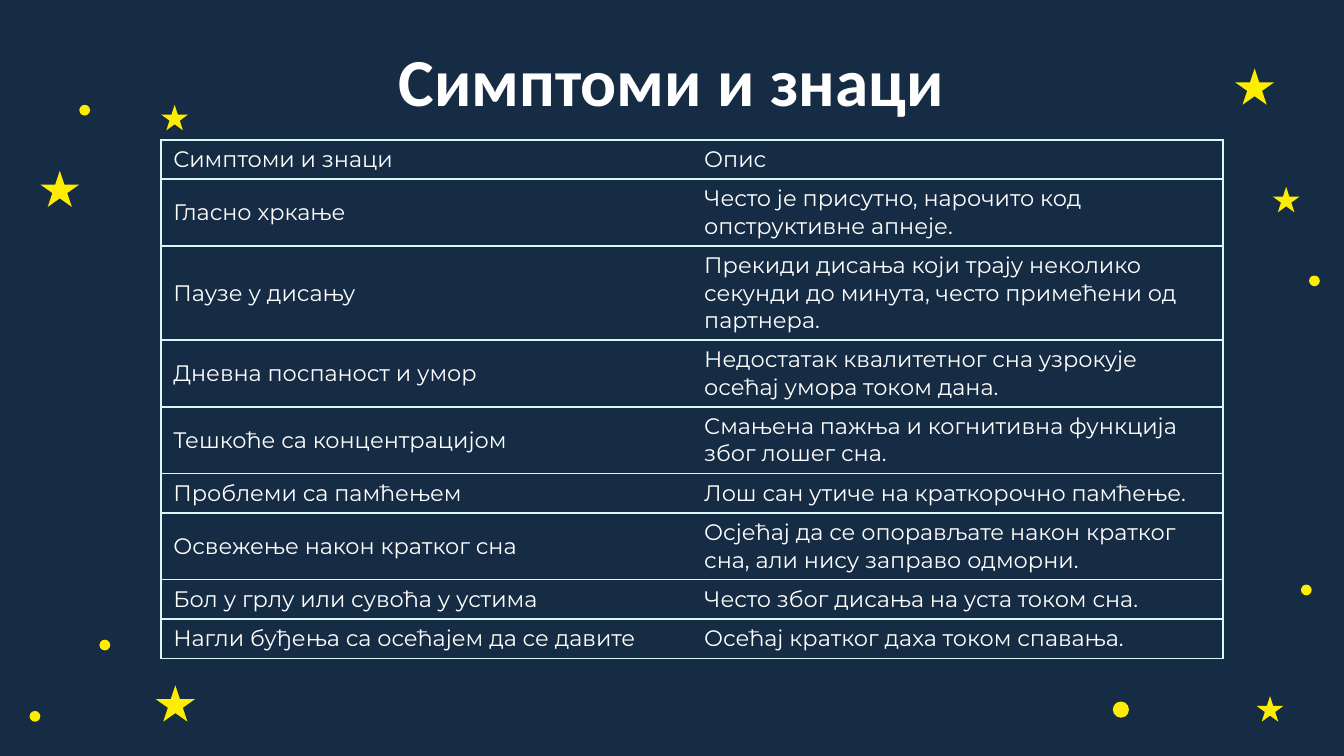
"""Build the slide listing sleep apnea symptoms on a starry night background."""
from lxml.etree import SubElement
from pptx import Presentation
from pptx.dml.color import RGBColor as Color
from pptx.enum.shapes import MSO_SHAPE as Shape
from pptx.enum.text import MSO_ANCHOR as Anchor, PP_ALIGN as Align
from pptx.oxml.ns import qn
from pptx.util import Inches, Pt

THEME = {
    "night": "162C44", "star": "FEED01", "text": "FFFFFF", "border": "D9F8F9",
    "title_font": "Calibri", "title_size": 36,
    "body_font": "Montserrat", "body_size": 12, "border_width": 1,
}
TITLE = "Симптоми и знаци"
SYMPTOMS = [
    ("Симптоми и знаци", "Опис", 1),
    ("Гласно хркање", "Често је присутно, нарочито код опструктивне апнеје.", 2),
    ("Паузе у дисању", "Прекиди дисања који трају неколико секунди до минута, "
     "често примећени од партнера.", 3),
    ("Дневна поспаност и умор",
     "Недостатак квалитетног сна узрокује осећај умора током дана.", 2),
    ("Тешкоће са концентрацијом", "Смањена пажња и когнитивна функција због лошег сна.", 2),
    ("Проблеми са памћењем", "Лош сан утиче на краткорочно памћење.", 1),
    ("Освежење након кратког сна",
     "Осјећај да се опорављате након кратког сна, али нису заправо одморни.", 2),
    ("Бол у грлу или сувоћа у устима", "Често због дисања на уста током сна.", 1),
    ("Нагли буђења са осећајем да се давите", "Осећај кратког даха током спавања.", 1),
]
SKY = [
    (Shape.STAR_5_POINT, 0.29, 0.27, [(9.19, 0.51), (0.3, 1.27), (1.16, 5.1)]),
    (Shape.STAR_5_POINT, 0.2, 0.19, [(9.47, 1.39), (9.35, 5.18), (1.2, 0.78)]),
    (Shape.OVAL, 0.08, 0.08, [(9.74, 2.05), (0.59, 0.78), (0.74, 4.76),
                              (9.68, 4.35), (0.22, 5.29)]),
    (Shape.OVAL, 0.12, 0.12, [(8.28, 5.22)]),
]
PAGE_WIDTH = 10
TABLE_LEFT, TABLE_TOP, COLUMN_WIDTH = 1.2, 1.04, 3.95
LINE_SPACING, ROW_PADDING = 1.22, 0.09


def color(name):
    return Color.from_string(THEME[name])


def style_text(para, kind, bold=False):
    for span in para.runs:
        span.font.name = THEME[f"{kind}_font"]
        span.font.size = Pt(THEME[f"{kind}_size"])
        span.font.color.rgb = color("text")
        span.font.bold = bold


def add_sky(page):
    for preset, width, height, places in SKY:
        for left, top in places:
            light = page.shapes.add_shape(
                preset, Inches(left), Inches(top), Inches(width), Inches(height))
            light.shadow.inherit = False
            light.fill.solid()
            light.fill.fore_color.rgb = color("star")
            light.line.fill.background()


def add_title(page):
    box = page.shapes.add_textbox(Inches(0.78), Inches(0.19), Inches(8.43), Inches(0.73))
    frame = box.text_frame
    frame.text = TITLE
    frame.word_wrap = True
    frame.vertical_anchor = Anchor.TOP
    frame.margin_left = frame.margin_right = Inches(0.1)
    frame.margin_top = frame.margin_bottom = Inches(0.1)
    para = frame.paragraphs[0]
    para.alignment = Align.CENTER
    style_text(para, "title", bold=True)


def set_borders(cell, open_side):
    properties = cell._tc.get_or_add_tcPr()
    for side in "LRTB":
        line = SubElement(properties, qn(f"a:ln{side}"), w=str(Pt(THEME["border_width"])))
        if side == open_side:
            SubElement(line, qn("a:noFill"))
        else:
            fill = SubElement(line, qn("a:solidFill"))
            SubElement(fill, qn("a:srgbClr"), val=THEME["border"])


def add_symptom_table(page):
    line_height = THEME["body_size"] * LINE_SPACING / 72
    heights = [lines * line_height + ROW_PADDING for *_, lines in SYMPTOMS]
    table = page.shapes.add_table(
        len(SYMPTOMS), 2, Inches(TABLE_LEFT), Inches(TABLE_TOP),
        Inches(2 * COLUMN_WIDTH), Inches(sum(heights))).table
    table.first_row = table.horz_banding = False
    for column in table.columns:
        column.width = Inches(COLUMN_WIDTH)
    for row, height, (symptom, description, _) in zip(table.rows, heights, SYMPTOMS):
        row.height = Inches(height)
        for cell, text, open_side in zip(row.cells, (symptom, description), "RL"):
            set_borders(cell, open_side)
            cell.fill.solid()
            cell.fill.fore_color.rgb = color("night")
            cell.vertical_anchor = Anchor.MIDDLE
            cell.margin_left = cell.margin_right = Inches(0.09)
            cell.margin_top = cell.margin_bottom = Inches(0.04)
            cell.text_frame.text = text
            style_text(cell.text_frame.paragraphs[0], "body")


def main():
    deck = Presentation()
    deck.slide_width, deck.slide_height = Inches(PAGE_WIDTH), Inches(PAGE_WIDTH * 9 / 16)
    page = deck.slides.add_slide(deck.slide_layouts[6])
    page.background.fill.solid()
    page.background.fill.fore_color.rgb = color("night")
    add_sky(page)
    add_title(page)
    add_symptom_table(page)
    deck.save("out.pptx")


if __name__ == "__main__":
    main()
